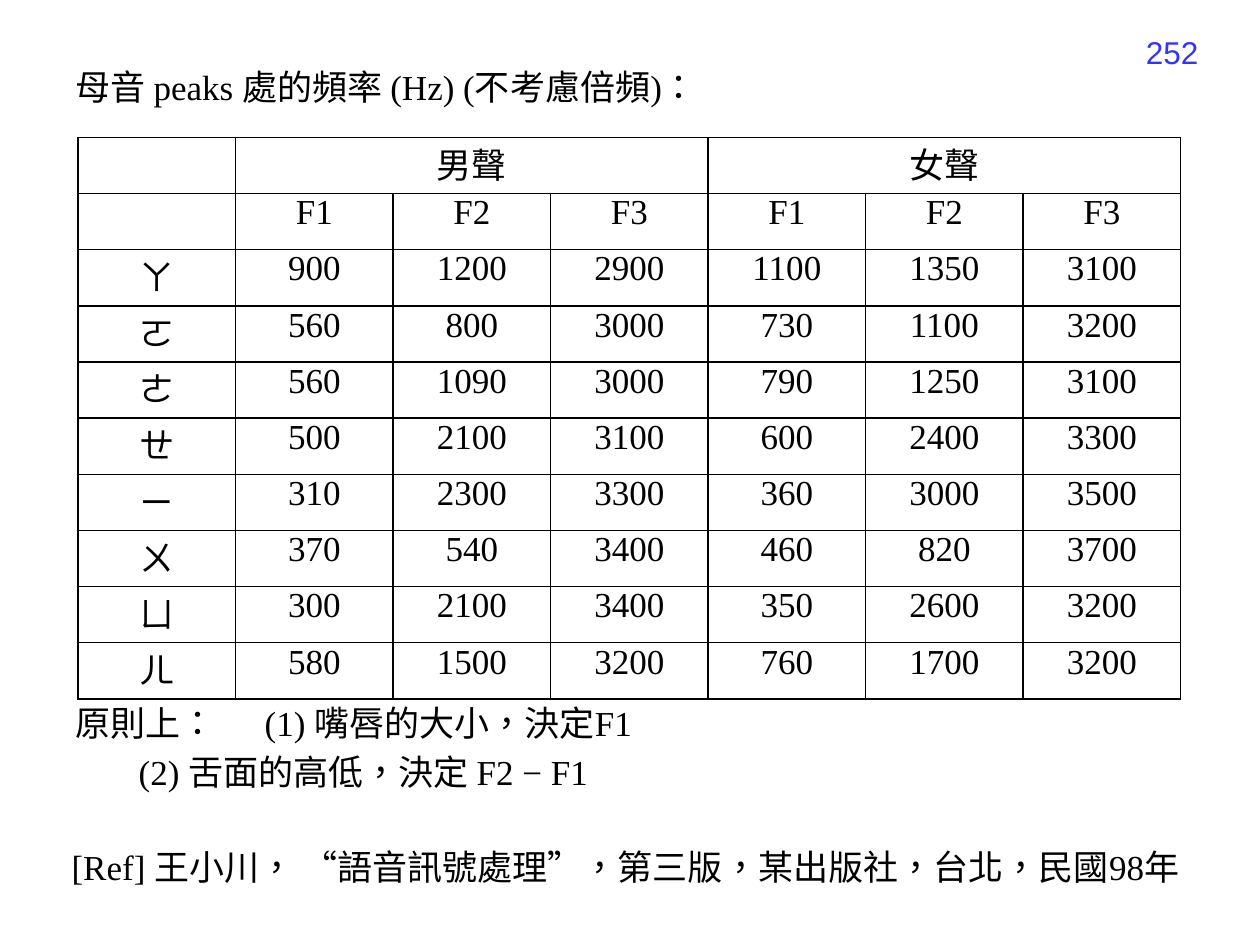
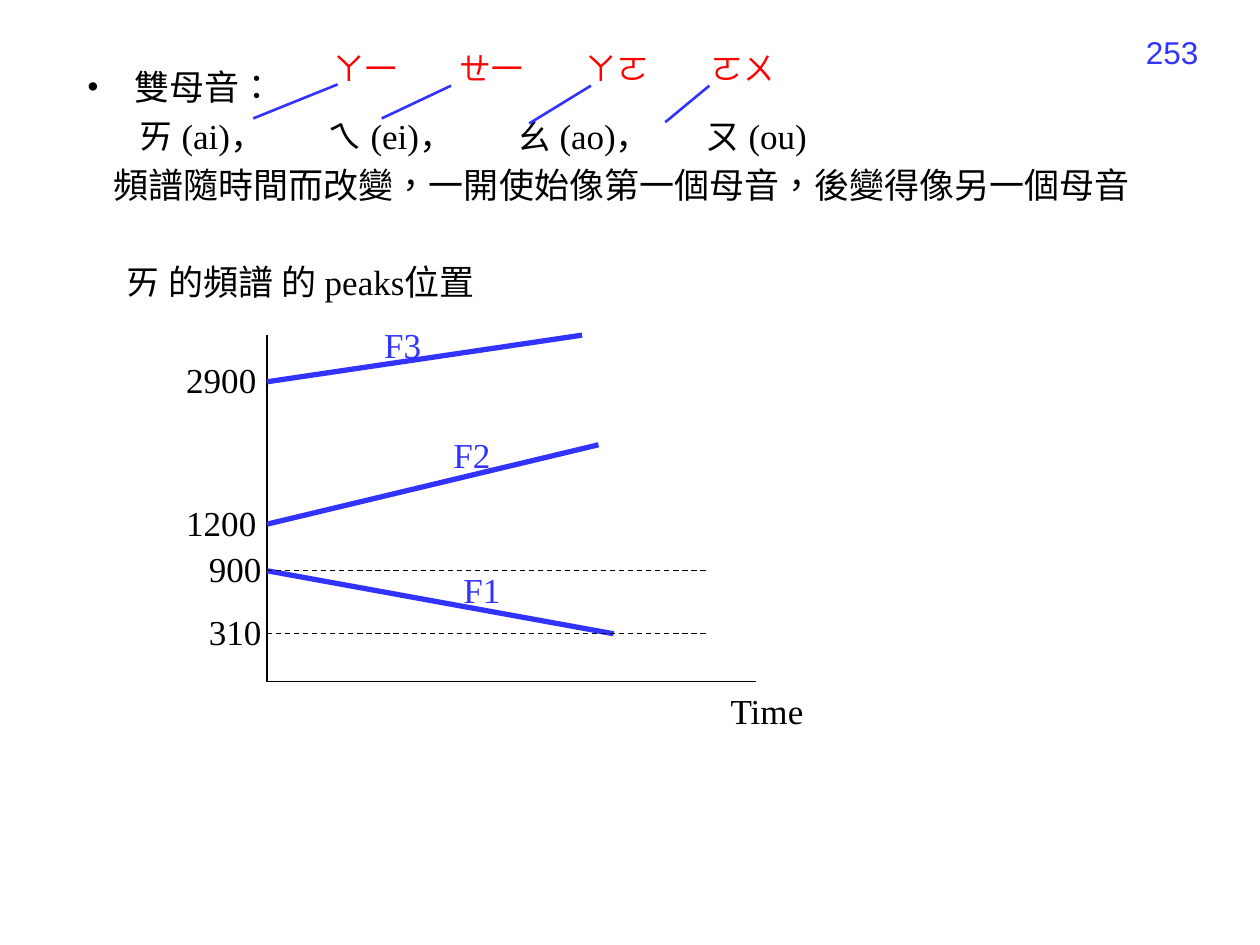
import pptx
import pptx.dml.color
import pptx.enum.dml
import pptx.enum.shapes
import pptx.enum.text
import pptx.oxml.ns
import pptx.util
from lxml import etree

COLUMNS, ROWS = 100, 75
COLORS = {"ink": "000000", "blue": "3333FF", "red": "FF0000"}
SERIF, SANS = "Times New Roman", "Arial"
TEXT_SIZE, SMALL_SIZE = 20, 18
ALIGN = pptx.enum.text.PP_ALIGN
DASH = pptx.enum.dml.MSO_LINE.DASH

FORMANTS = ("F1", "F2", "F3")
VOWEL_PEAKS = {
    "ㄚ": (900, 1200, 2900, 1100, 1350, 3100),
    "ㄛ": (560, 800, 3000, 730, 1100, 3200),
    "ㄜ": (560, 1090, 3000, 790, 1250, 3100),
    "ㄝ": (500, 2100, 3100, 600, 2400, 3300),
    "ㄧ": (310, 2300, 3300, 360, 3000, 3500),
    "ㄨ": (370, 540, 3400, 460, 820, 3700),
    "ㄩ": (300, 2100, 3400, 350, 2600, 3200),
    "ㄦ": (580, 1500, 3200, 760, 1700, 3200),
}


def add_xml(parent, tag, **attributes):
    return etree.SubElement(parent, pptx.oxml.ns.qn(tag), attributes)


def rgb(color):
    return pptx.dml.color.RGBColor.from_string(COLORS[color])


class Deck:
    def __init__(self):
        self.prs = pptx.Presentation()
        self.prs.slide_width = pptx.util.Inches(10)
        self.prs.slide_height = pptx.util.Inches(7.5)
        self.slide = None

    def x(self, columns):
        return round(self.prs.slide_width * columns / COLUMNS)

    def y(self, rows):
        return round(self.prs.slide_height * rows / ROWS)

    def box(self, left, top, width, height):
        return self.x(left), self.y(top), self.x(width), self.y(height)

    def new_slide(self, number):
        self.slide = self.prs.slides.add_slide(self.prs.slide_layouts[1])
        self.text(str(number), 72.8, 2.1, 23.3, 5.2, SMALL_SIZE, "blue", SANS, ALIGN.RIGHT)

    def style(self, paragraph, size=TEXT_SIZE, color="ink", font=SERIF, align=ALIGN.LEFT):
        paragraph.alignment = align
        for run in paragraph.runs:
            run.font.size = pptx.util.Pt(size)
            run.font.name = font
            run.font.color.rgb = rgb(color)
            run._r.get_or_add_rPr().set("lang", "zh-TW")

    def tabs(self, paragraph, stops):
        stop_list = add_xml(paragraph._p.get_or_add_pPr(), "a:tabLst")
        for stop in stops:
            add_xml(stop_list, "a:tab", pos=str(self.x(stop)), algn="l")

    def text(self, words, left, top, width, height=4.4, size=TEXT_SIZE, color="ink",
             font=SERIF, align=ALIGN.LEFT, stops=()):
        frame = self.slide.shapes.add_textbox(*self.box(left, top, width, height)).text_frame
        frame.word_wrap = True
        frame.text = words
        self.style(frame.paragraphs[0], size, color, font, align)
        if stops:
            self.tabs(frame.paragraphs[0], stops)

    def fill_placeholder(self, holder, lines, top, height):
        holder.left, holder.top, holder.width, holder.height = self.box(5, top, 89.5, height)
        frame = holder.text_frame
        frame.text = "\n".join(words for words, _, _ in lines)
        frame.word_wrap = True
        frame.auto_size = pptx.enum.text.MSO_AUTO_SIZE.NONE
        frame.vertical_anchor = pptx.enum.text.MSO_ANCHOR.TOP
        for paragraph, (_, margin, stops) in zip(frame.paragraphs, lines):
            self.style(paragraph)
            paragraph.space_before = pptx.util.Pt(4)
            properties = paragraph._p.get_or_add_pPr()
            properties.set("marL", str(self.x(margin)))
            properties.set("indent", "0")
            add_xml(properties, "a:buNone")
            if stops:
                self.tabs(paragraph, stops)

    def title(self, words, bulleted=False):
        holder = self.slide.shapes.title
        self.fill_placeholder(holder, [(words, 0, ())], 4.7, 4.4)
        if bulleted:
            properties = holder.text_frame.paragraphs[0]._p.pPr
            properties.remove(properties.find(pptx.oxml.ns.qn("a:buNone")))
            properties.set("marL", str(self.x(4.7)))
            properties.set("indent", str(-self.x(3.8)))
            add_xml(properties, "a:buFont", typeface=SERIF)
            add_xml(properties, "a:buChar", char="•")

    def body(self, lines, top, height):
        self.fill_placeholder(self.slide.placeholders[1], lines, top, height)

    def line(self, start, end, color="ink", weight=0.75, dash=None):
        connector = self.slide.shapes.add_connector(
            pptx.enum.shapes.MSO_CONNECTOR.STRAIGHT,
            self.x(start[0]), self.y(start[1]), self.x(end[0]), self.y(end[1]))
        connector.line.color.rgb = rgb(color)
        connector.line.width = pptx.util.Pt(weight)
        if dash:
            connector.line.dash_style = dash
        add_xml(connector._element.spPr, "a:effectLst")

    def cell(self, cell, words):
        cell.margin_left = cell.margin_right = self.x(0.5)
        cell.margin_top = cell.margin_bottom = 0
        cell.text = str(words)
        self.style(cell.text_frame.paragraphs[0], align=ALIGN.CENTER)
        properties = cell._tc.get_or_add_tcPr()
        for side in ("a:lnL", "a:lnR", "a:lnT", "a:lnB"):
            border = add_xml(properties, side, w=str(pptx.util.Pt(1)))
            add_xml(add_xml(border, "a:solidFill"), "a:srgbClr", val=COLORS["ink"])
        cell.fill.background()

    def table(self, records, left, top, width, height, merges):
        grid = self.slide.shapes.add_table(
            len(records), len(records[0]), *self.box(left, top, width, height)).table
        grid.first_row = grid.horz_banding = False
        for row, record in enumerate(records):
            for column, words in enumerate(record):
                self.cell(grid.cell(row, column), words)
        for row, first, last in merges:
            grid.cell(row, first).merge(grid.cell(row, last))


def vowel_table(deck):
    deck.new_slide(252)
    deck.title("母音 peaks 處的頻率 (Hz) (不考慮倍頻)：")
    records = [("", "男聲", "", "", "女聲", "", ""), ("", *FORMANTS, *FORMANTS)]
    records += [(vowel, *peaks) for vowel, peaks in VOWEL_PEAKS.items()]
    deck.table(records, 6.2, 10.9, 87.5, 44.6, [(0, 1, 3), (0, 4, 6)])
    deck.body([("原則上：\t(1) 嘴唇的大小，決定F1", 0, [13]),
               ("\t(2) 舌面的高低，決定 F2 − F1", 0, [12.5])], 55.2, 9)
    deck.text("[Ref] 王小川， “語音訊號處理”，第三版，某出版社，台北，民國98年", 4.7, 66.6, 90.3)


def diphthongs(deck):
    deck.new_slide(253)
    deck.title("雙母音：", bulleted=True)
    deck.body([("\tㄞ (ai)，\tㄟ (ei)，\tㄠ (ao)，\tㄡ (ou)", 0, [10, 22.5, 35.8, 49]),
               ("頻譜隨時間而改變，一開使始像第一個母音，後變得像另一個母音", 3, ())], 8.6, 9)
    deck.text("ㄚ一\tㄝ一\tㄚㄛ\tㄛㄨ", 25.5, 3.4, 45.7, 4, SMALL_SIZE, "red", stops=[10, 20, 30])
    for start, end in (((20.1, 9.4), (26.8, 6.7)), ((30.3, 9.4), (35.8, 6.8)),
                       ((42, 9.8), (46.9, 6.8)), ((52.8, 9.7), (56.3, 6.8))):
        deck.line(start, end, "blue", 1.5)

    axis, baseline = 21.2, 54.1
    deck.text("ㄞ 的頻譜 的 peaks位置", 9, 20.2, 30.1)
    deck.line((axis, 26.6), (axis, baseline))
    deck.line((axis, baseline), (60, baseline))
    deck.text("Time", 57, 54.2, 7.8)

    levels = {2900: 30.3, 1200: 41.6, 900: 45.3, 310: 50.3}
    for frequency, level in levels.items():
        left, width = (13.8, 8.7) if frequency >= 1000 else (15.6, 6.3)
        deck.text(str(frequency), left, level - 2.3, width)
    tracks = ((900, (48.7, 50.3), (35.8, 44.6)),
              (1200, (47.5, 35.3), (35, 33.9)),
              (2900, (46.2, 26.6), (29.5, 25.2)))
    for formant, (frequency, end, label) in zip(FORMANTS, tracks):
        deck.line((axis, levels[frequency]), end, "blue", 3)
        deck.text(formant, *label, 7.9, color="blue")
    for frequency in (900, 310):
        deck.line((axis, levels[frequency]), (56.2, levels[frequency]), dash=DASH)


def main():
    deck = Deck()
    vowel_table(deck)
    diphthongs(deck)
    deck.prs.save("out.pptx")


if __name__ == "__main__":
    main()
